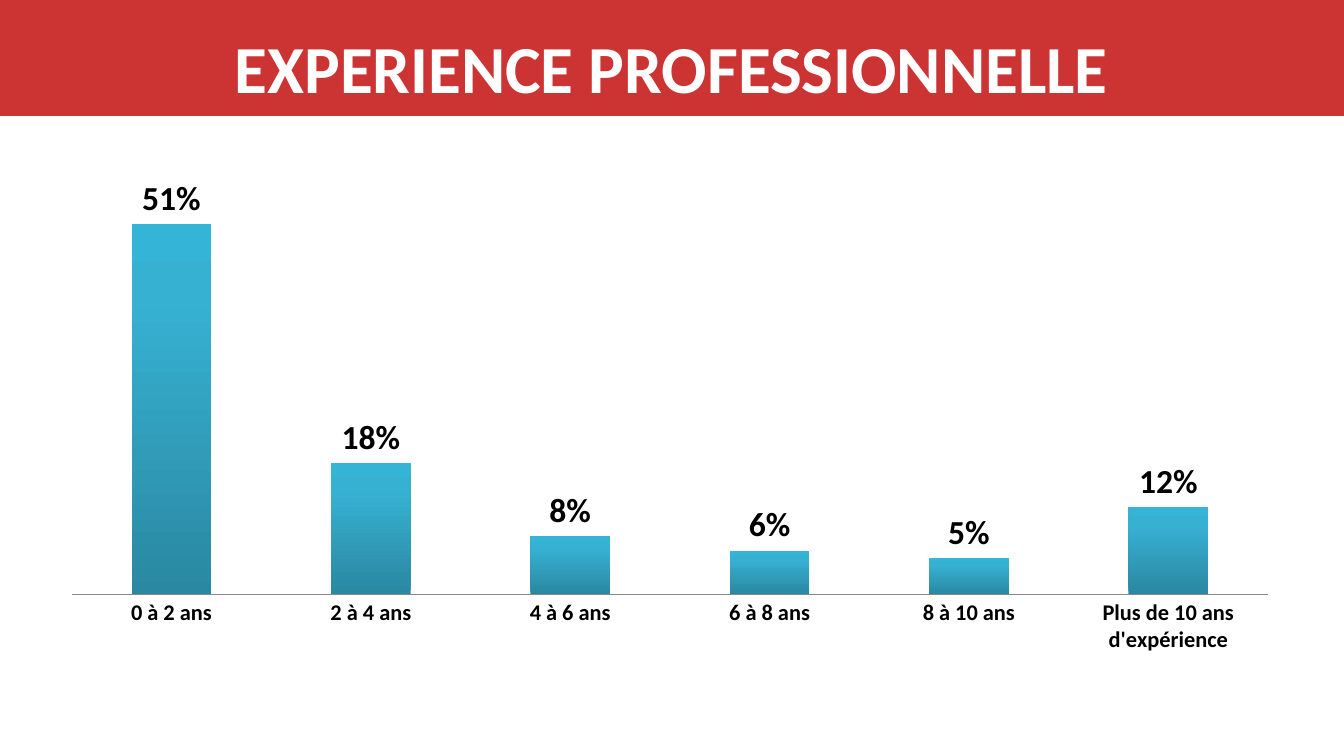
"""Build a slide with a column chart of professional experience."""
from copy import deepcopy
from dataclasses import dataclass

from lxml.etree import SubElement
from pptx import Presentation
from pptx.chart.data import CategoryChartData
from pptx.dml.color import RGBColor
from pptx.enum.chart import XL_CHART_TYPE, XL_LABEL_POSITION, XL_TICK_MARK
from pptx.enum.shapes import MSO_SHAPE
from pptx.enum.text import MSO_ANCHOR, PP_ALIGN
from pptx.oxml.ns import qn
from pptx.util import Emu, Pt

TITLE = "EXPERIENCE PROFESSIONNELLE"
EXPERIENCE = [
    ("0 à 2 ans", 0.51),
    ("2 à 4 ans", 0.18),
    ("4 à 6 ans", 0.08),
    ("6 à 8 ans", 0.06),
    ("8 à 10 ans", 0.05),
    ("Plus de 10 ans d'expérience", 0.12),
]
PAGE = (1344, 756)
BAND_BOX = (0, 0, 1344, 116)
TITLE_BOX = (132, 19, 1079, 95)
CHART_BOX = (47, 148, 1246, 516)
PLOT_BOX = (72, 158, 1196, 436)


@dataclass(frozen=True)
class Theme:
    font: str = "Calibri"
    band: str = "CC3333"
    title: str = "FFFFFF"
    text: str = "000000"
    axis: str = "888888"
    gradient: tuple = ((0, "2A88A2"), (0.8, "37B1D2"), (1, "34B4D6"))
    title_size: int = 36
    label_size: int = 18
    category_size: int = 12


THEME = Theme()


def px(length):
    return Emu(round(length * 914400 / 134.4))


def rgb(color):
    return RGBColor.from_string(color)


def style_font(font, size, color=THEME.text, bold=True):
    font.name, font.size, font.bold = THEME.font, Pt(size), bold
    font.color.rgb = rgb(color)


def write_text(shape, text, size, color, align=PP_ALIGN.CENTER):
    frame = shape.text_frame
    frame.word_wrap = True
    frame.vertical_anchor = MSO_ANCHOR.MIDDLE
    para = frame.paragraphs[0]
    para.alignment = align
    span = para.add_run()
    span.text = text
    style_font(span.font, size, color)


def add_header(page):
    band = page.shapes.add_shape(MSO_SHAPE.RECTANGLE, *map(px, BAND_BOX))
    band.shadow.inherit = False
    band.fill.solid()
    band.fill.fore_color.rgb = rgb(THEME.band)
    band.line.fill.background()
    title = page.shapes.title
    title.left, title.top, title.width, title.height = map(px, TITLE_BOX)
    write_text(title, TITLE, size=THEME.title_size, color=THEME.title)
    title._element.addprevious(band._element)


def place_plot(chart):
    area = chart._chartSpace.find(".//" + qn("c:plotArea"))
    for old in area.findall(qn("c:layout")):
        area.remove(old)
    layout = SubElement(area, qn("c:layout"))
    area.insert(0, layout)
    manual = SubElement(layout, qn("c:manualLayout"))
    left, top, width, height = CHART_BOX
    x, y, w, h = PLOT_BOX
    settings = {
        "layoutTarget": "inner", "xMode": "edge", "yMode": "edge",
        "x": round((x - left) / width, 2), "y": round((y - top) / height, 2),
        "w": round(w / width, 2), "h": round(h / height, 3),
    }
    for name, value in settings.items():
        SubElement(manual, qn("c:" + name)).set("val", str(value))


def fill_gradient(series):
    fill = series.format.fill
    fill.gradient()
    fill.gradient_angle = 90
    stops = series._element.find(".//" + qn("a:gsLst"))
    while len(stops) < len(THEME.gradient):
        stops.append(deepcopy(stops[0]))
    for stop, (position, color) in zip(fill.gradient_stops, THEME.gradient):
        stop.position = position
        stop.color.rgb = rgb(color)


def add_experience_chart(page):
    data = CategoryChartData(number_format="0%")
    data.categories = [name for name, share in EXPERIENCE]
    data.add_series("Series 1", [share for name, share in EXPERIENCE])
    chart = page.shapes.add_chart(
        XL_CHART_TYPE.COLUMN_CLUSTERED, *map(px, CHART_BOX), data).chart
    style_font(chart.font, THEME.label_size, bold=False)
    chart.has_legend = chart.has_title = False

    values = chart.value_axis
    values.visible = values.has_major_gridlines = False
    values.minimum_scale, values.maximum_scale = 0, 0.6
    categories = chart.category_axis
    categories.major_tick_mark = XL_TICK_MARK.NONE
    categories.format.line.color.rgb = rgb(THEME.axis)
    categories.format.line.width = Pt(0.75)
    style_font(categories.tick_labels.font, THEME.category_size)

    plot = chart.plots[0]
    plot.gap_width, plot.overlap = 150, -25
    plot.vary_by_categories = False
    plot.has_data_labels = True
    labels = plot.data_labels
    labels.show_value = True
    labels.number_format, labels.number_format_is_linked = "0%", False
    labels.position = XL_LABEL_POSITION.OUTSIDE_END
    style_font(labels.font, THEME.label_size)
    fill_gradient(plot.series[0])
    place_plot(chart)


def main():
    deck = Presentation()
    deck.slide_width, deck.slide_height = map(px, PAGE)
    page = deck.slides.add_slide(deck.slide_layouts[5])
    add_header(page)
    add_experience_chart(page)
    deck.save("out.pptx")


if __name__ == "__main__":
    main()
